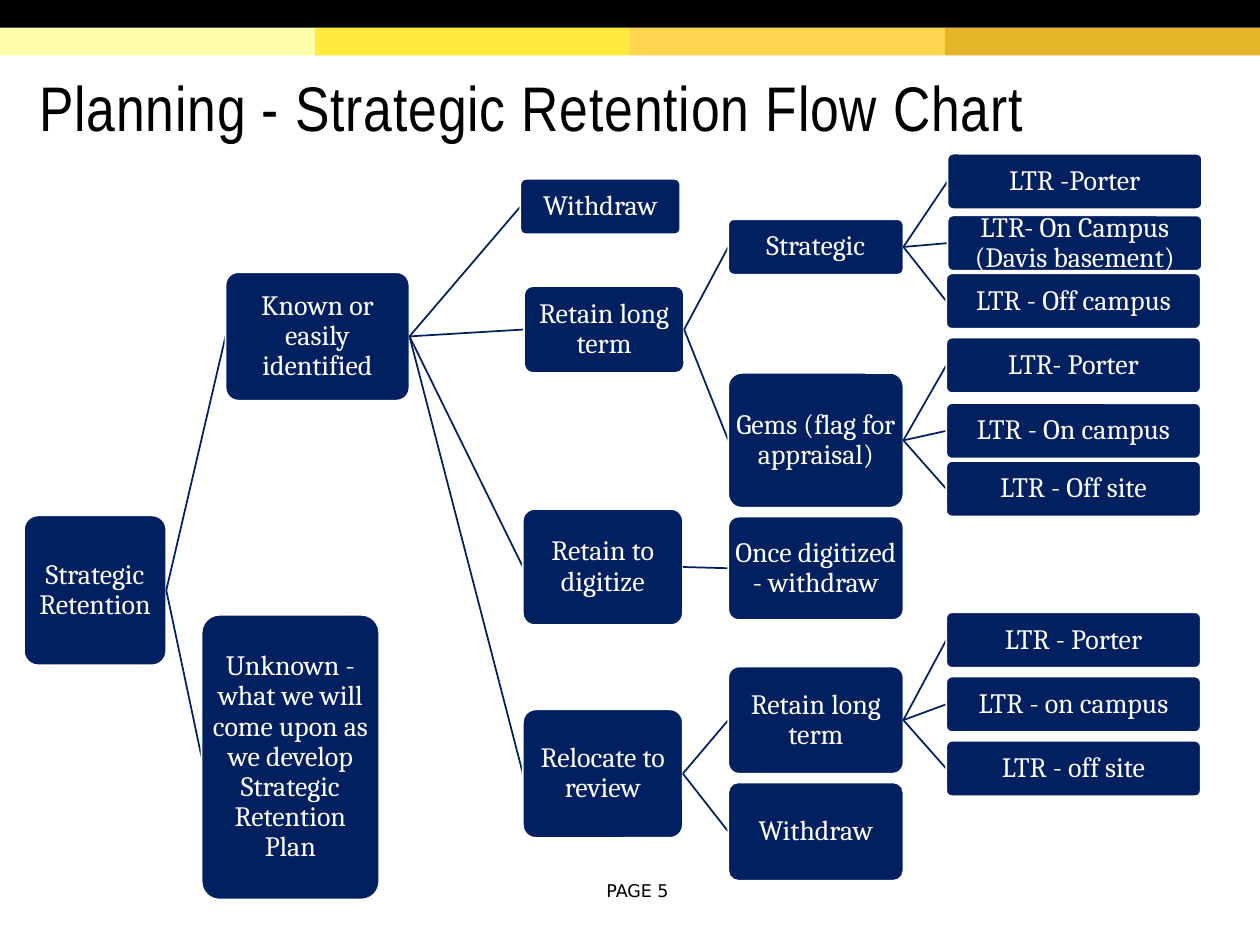
from dataclasses import dataclass

from lxml.etree import SubElement
from pptx import Presentation
from pptx.dml.color import RGBColor
from pptx.enum.shapes import MSO_CONNECTOR, MSO_SHAPE
from pptx.enum.text import MSO_ANCHOR, MSO_AUTO_SIZE, PP_ALIGN
from pptx.oxml.ns import qn
from pptx.util import Inches, Pt

TITLE_ONLY_LAYOUT = 5
GRID_COLUMNS, GRID_ROWS = 100, 75
SLIDE_WIDTH, SLIDE_HEIGHT = Inches(10), Inches(7.5)


@dataclass(frozen=True)
class Theme:
    title_font: str = "Arial Narrow"
    box_font: str = "Cambria"
    page_font: str = "DejaVu Sans"
    title_size: int = 36
    box_size: int = 16
    page_size: int = 10
    ink: str = "000000"
    paper: str = "FFFFFF"
    navy: str = "002060"
    bands: tuple = ("FFFFAA", "FFEA3D", "FFD54F", "E4B429")


@dataclass(frozen=True)
class Step:
    """One box of the flow chart, in grid units, with the steps it leads to."""
    text: str
    left: float
    top: float
    width: float
    height: float
    next_steps: tuple = ()


THEME = Theme()


def column(count):
    return round(SLIDE_WIDTH * count / GRID_COLUMNS)


def row(count):
    return round(SLIDE_HEIGHT * count / GRID_ROWS)


def grid_box(left, top, width, height):
    return column(left), row(top), column(width), row(height)


def color(value):
    return RGBColor.from_string(value)


def write_text(shape, text, *, font, size, text_color, align=PP_ALIGN.CENTER,
               line_spacing=1.0, letter_spacing=0, margins=(0.1, 0.05, 0.1, 0.05)):
    frame = shape.text_frame
    frame.word_wrap = True
    frame.auto_size = MSO_AUTO_SIZE.NONE
    frame.vertical_anchor = MSO_ANCHOR.MIDDLE
    (frame.margin_left, frame.margin_top,
     frame.margin_right, frame.margin_bottom) = map(Inches, margins)
    paragraph = frame.paragraphs[0]
    paragraph.alignment = align
    paragraph.line_spacing = line_spacing
    run = paragraph.add_run()
    run.text = text
    run.font.name = font
    run.font.size = Pt(size)
    run.font.color.rgb = color(text_color)
    if letter_spacing:
        run.font._element.set("spc", str(round(letter_spacing * 100)))


def add_box(slide, kind, place, fill, line=None):
    shape = slide.shapes.add_shape(kind, *grid_box(*place))
    shape.shadow.inherit = False
    shape.fill.solid()
    shape.fill.fore_color.rgb = color(fill)
    if line:
        shape.line.color.rgb = color(line)
        shape.line.width = Pt(1)
    else:
        shape.line.fill.background()
    return shape


def add_link(slide, source, target):
    link = slide.shapes.add_connector(
        MSO_CONNECTOR.STRAIGHT,
        column(source.left + source.width), row(source.top + source.height / 2),
        column(target.left), row(target.top + target.height / 2))
    link.line.color.rgb = color(THEME.navy)
    link.line.width = Pt(1)
    SubElement(link._element.spPr, qn("a:effectLst"))


def add_header(slide):
    band_width = GRID_COLUMNS / len(THEME.bands)
    for index, fill in enumerate(THEME.bands):
        place = (index * band_width, 2.2, band_width, 2.2)
        add_box(slide, MSO_SHAPE.RECTANGLE, place, fill)
    add_box(slide, MSO_SHAPE.RECTANGLE, (0, 0, GRID_COLUMNS, 2.2), THEME.ink)


def add_title(slide, text):
    title = slide.shapes.title
    title.left, title.top, title.width, title.height = grid_box(2.1, 4.7, 94.9, 7.9)
    write_text(title, text, font=THEME.title_font, size=THEME.title_size,
               text_color=THEME.ink, align=PP_ALIGN.LEFT, line_spacing=0.85,
               letter_spacing=0.5, margins=(0.1, 0.1, 0.1, 0.05))


def add_page_label(slide, text):
    label = slide.shapes.add_textbox(*grid_box(45.8, 69.3, 9.6, 2.7))
    write_text(label, text, font=THEME.page_font, size=THEME.page_size,
               text_color=THEME.ink)


def add_step(slide, step):
    """Draw a step, then every link and step that follows from it."""
    place = (step.left, step.top, step.width, step.height)
    shape = add_box(slide, MSO_SHAPE.ROUNDED_RECTANGLE, place, THEME.navy, THEME.paper)
    shape.adjustments[0] = 0.1
    write_text(shape, step.text, font=THEME.box_font, size=THEME.box_size,
               text_color=THEME.paper, line_spacing=0.9, margins=(0.01,) * 4)
    for next_step in step.next_steps:
        add_link(slide, step, next_step)
        add_step(slide, next_step)


# Columns of the chart
def action(text, top, height, *next_steps, left=41.5):
    return Step(text, left, top, 12.7, height, next_steps)


def outcome(text, top, height, *next_steps):
    return Step(text, 57.8, top, 13.9, height, next_steps)


def location(text, top, left=75.1):
    return Step(text, left, top, 20.2, 4.4)


def retention_chart():
    strategic = outcome("Strategic", 17.4, 4.4,
                        location("LTR -Porter", 12.2, left=75.2),
                        location("LTR- On Campus (Davis basement)", 17.1, left=75.2),
                        location("LTR - Off campus", 21.7))
    gems = outcome("Gems (flag for appraisal)", 29.6, 10.7,
                   location("LTR- Porter", 26.8),
                   location("LTR - On campus", 32),
                   location("LTR - Off site", 36.6))
    reviewed = outcome("Retain long term", 52.9, 8.5,
                       location("LTR - Porter", 48.6),
                       location("LTR - on campus", 53.7),
                       location("LTR - off site", 58.8))
    known = Step("Known or easily identified", 17.9, 21.6, 14.6, 10.2, (
        action("Withdraw", 14.2, 4.4, left=41.3),
        action("Retain long term", 22.7, 6.9, strategic, gems, left=41.6),
        action("Retain to digitize", 40.4, 9.2,
               outcome("Once digitized - withdraw", 41, 8.2)),
        action("Relocate to review", 56.3, 10.2, reviewed,
               outcome("Withdraw", 62.1, 7.8)),
    ))
    unknown = Step("Unknown - what we will come upon as we develop "
                   "Strategic Retention Plan", 16, 48.8, 14.1, 22.6)
    return Step("Strategic Retention", 1.9, 40.9, 11.3, 11.9, (known, unknown))


def main():
    presentation = Presentation()
    presentation.slide_width, presentation.slide_height = SLIDE_WIDTH, SLIDE_HEIGHT
    slide = presentation.slides.add_slide(presentation.slide_layouts[TITLE_ONLY_LAYOUT])
    add_header(slide)
    add_title(slide, "Planning - Strategic Retention Flow Chart")
    add_step(slide, retention_chart())
    add_page_label(slide, "PAGE 5")
    presentation.save("out.pptx")


if __name__ == "__main__":
    main()
